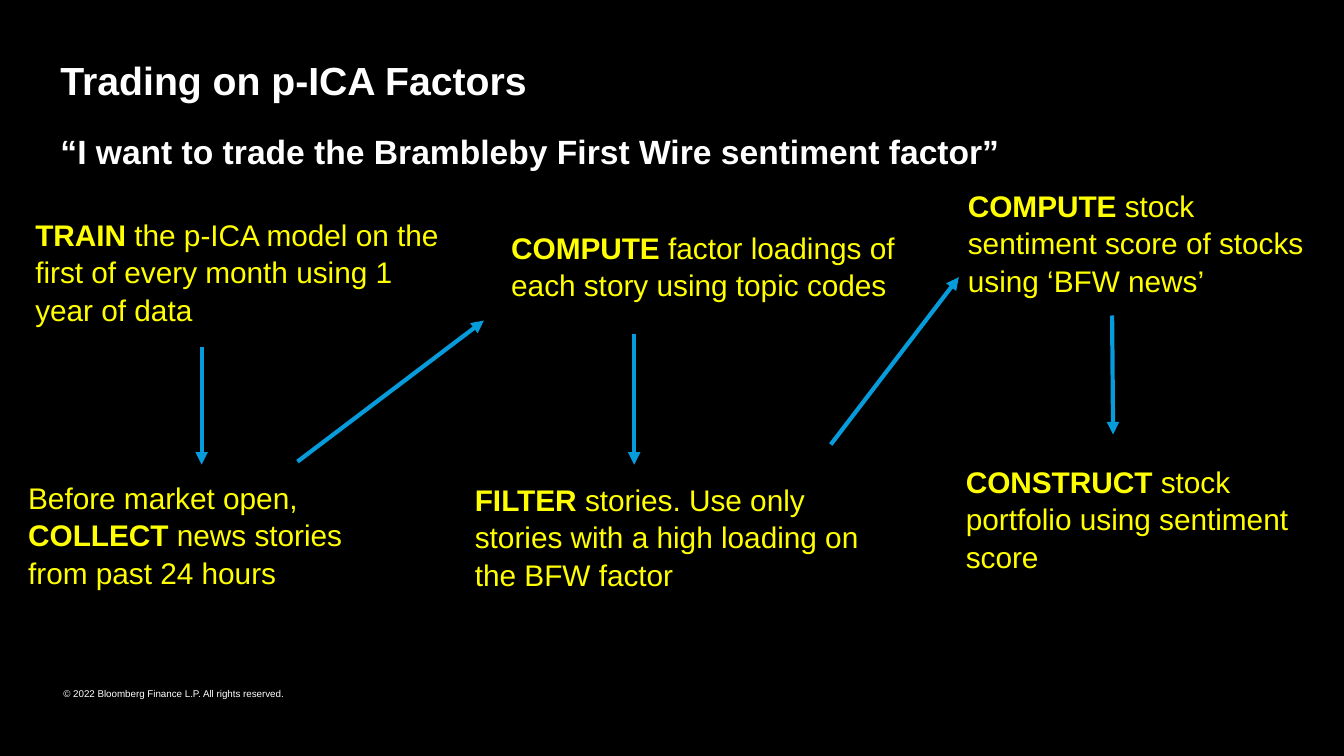
from lxml import etree
from pptx import Presentation
from pptx.dml.color import RGBColor
from pptx.enum.shapes import MSO_CONNECTOR as Connector
from pptx.enum.text import MSO_ANCHOR as Anchor
from pptx.oxml.ns import qn
from pptx.util import Inches, Pt

BLACK = RGBColor(0x00, 0x00, 0x00)
WHITE = RGBColor(0xFF, 0xFF, 0xFF)
YELLOW = RGBColor(0xFF, 0xFF, 0x00)
BLUE = RGBColor(0x06, 0x9C, 0xDB)

STEPS = [
    ((0.35, 2.13, 4.11, 1.08),
     [("TRAIN", True), (" the p-ICA model on the first of every month using 1 year of data", False)]),
    ((0.28, 4.74, 3.44, 1.08),
     [("Before market open, ", False), ("COLLECT ", True), ("news stories from past 24 hours", False)]),
    ((5.07, 2.26, 3.89, 0.72),
     [("COMPUTE ", True), ("factor loadings of each story using topic codes", False)]),
    ((4.71, 4.76, 3.89, 1.08),
     [("FILTER ", True), ("stories. Use only stories with a high loading on the BFW factor", False)]),
    ((9.6, 1.84, 3.56, 1.08),
     [("COMPUTE ", True), ("stock sentiment score of stocks using ‘BFW news’", False)]),
    ((9.58, 4.58, 3.56, 1.08),
     [("CONSTRUCT ", True), ("stock portfolio using sentiment score", False)]),
]

ARROWS = [
    (2, 3.44, 2, 4.61),
    (2.95, 4.58, 4.8, 3.18),
    (6.29, 3.31, 6.29, 4.61),
    (8.24, 4.41, 9.51, 2.75),
    (11.03, 3.13, 11.04, 4.31),
]


def add_text(slide, box, pieces, size, color, anchor=Anchor.TOP, insets=(0, 0), spacing=1.05):
    shape = slide.shapes.add_textbox(*map(Inches, box))
    frame = shape.text_frame
    frame.word_wrap = True
    frame.vertical_anchor = anchor
    frame.margin_left = frame.margin_right = Inches(insets[0])
    frame.margin_top = frame.margin_bottom = Inches(insets[1])
    paragraph = frame.paragraphs[0]
    paragraph.line_spacing = spacing
    for text, bold in pieces:
        run = paragraph.add_run()
        run.text = text
        run.font.name = "Arial"
        run.font.size = Pt(size)
        run.font.bold = bold
        run.font.color.rgb = color


def add_arrow(slide, ends):
    connector = slide.shapes.add_connector(Connector.STRAIGHT, *map(Inches, ends))
    connector.line.color.rgb = BLUE
    connector.line.width = Pt(3)
    etree.SubElement(connector.line._get_or_add_ln(), qn("a:tailEnd"), type="triangle")
    etree.SubElement(connector._element.spPr, qn("a:effectLst"))


def add_headings(slide, left, top):
    add_text(slide, (left, top, 10.3, 0.54), [("Trading on p-ICA Factors", True)],
             28, WHITE, Anchor.MIDDLE, spacing=1)
    add_text(slide, (left, top + 0.76, 10.07, 0.4),
             [("“I want to trade the Brambleby First Wire sentiment factor”", True)], 24, WHITE)


def add_workflow(slide):
    for box, pieces in STEPS:
        add_text(slide, box, pieces, 21.3, YELLOW)
    for ends in ARROWS:
        add_arrow(slide, ends)


def add_footer(slide, box):
    add_text(slide, box, [("© 2022 Bloomberg Finance L.P. All rights reserved.", False)],
             7, WHITE, insets=(0.1, 0.05), spacing=1)


def main():
    presentation = Presentation()
    presentation.slide_width = Inches(13.33)
    presentation.slide_height = Inches(7.5)
    slide = presentation.slides.add_slide(presentation.slide_layouts[6])
    slide.background.fill.solid()
    slide.background.fill.fore_color.rgb = BLACK
    add_headings(slide, 0.6, 0.52)
    add_workflow(slide)
    add_footer(slide, (0.53, 6.77, 3.63, 0.22))
    presentation.save("out.pptx")


if __name__ == "__main__":
    main()
